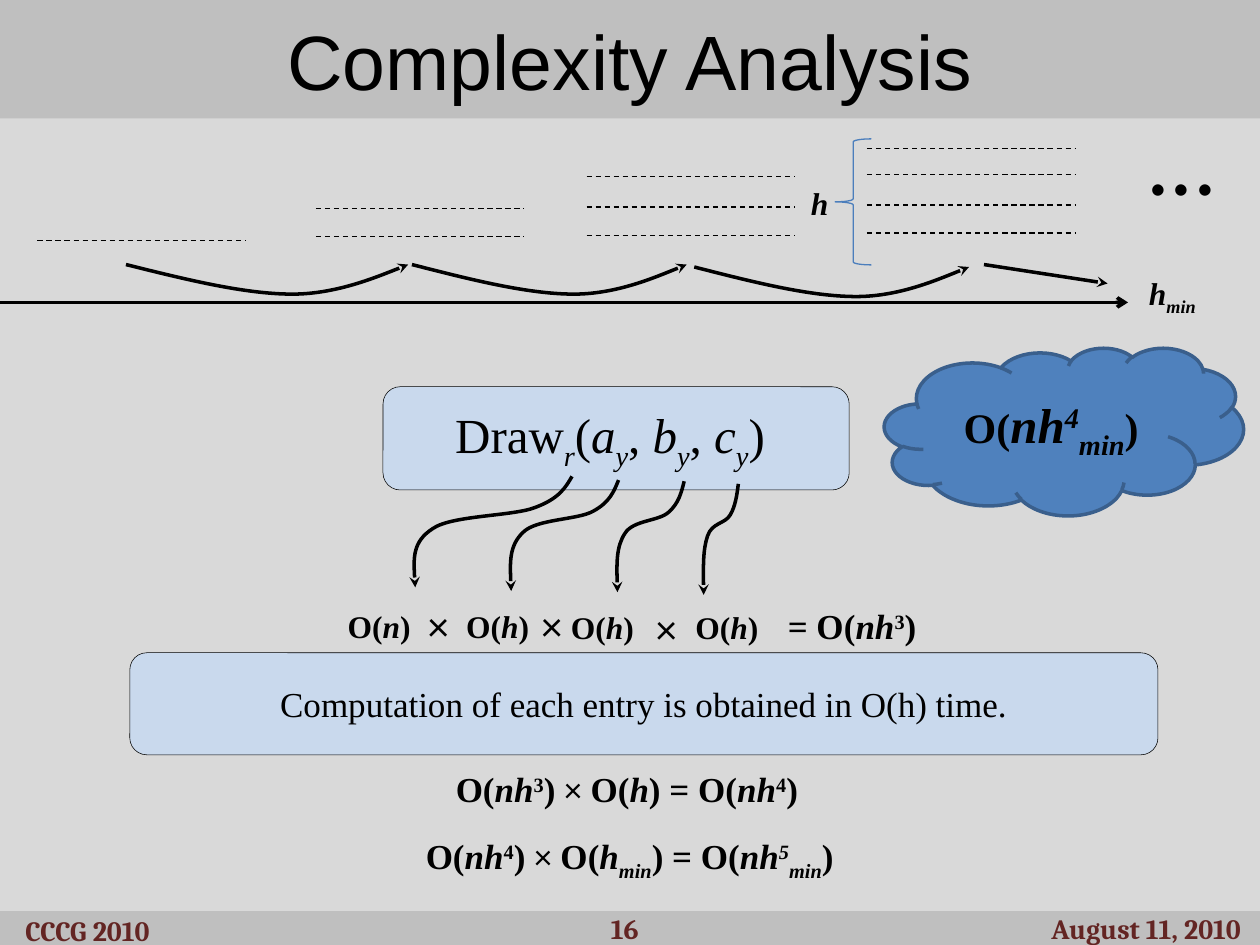
from dataclasses import dataclass

from lxml import etree
from pptx import Presentation
from pptx.dml.color import RGBColor
from pptx.enum.dml import MSO_LINE
from pptx.enum.shapes import MSO_CONNECTOR, MSO_SHAPE
from pptx.enum.text import MSO_ANCHOR, PP_ALIGN
from pptx.oxml.ns import qn
from pptx.util import Pt

ROUND, RECT = MSO_SHAPE.ROUNDED_RECTANGLE, MSO_SHAPE.RECTANGLE
CLOUD, BRACE = MSO_SHAPE.CLOUD, MSO_SHAPE.LEFT_BRACE
STRAIGHT, DASH = MSO_CONNECTOR.STRAIGHT, MSO_LINE.DASH
MIDDLE, CENTER, LEFT = MSO_ANCHOR.MIDDLE, PP_ALIGN.CENTER, PP_ALIGN.LEFT


@dataclass(frozen=True)
class Theme:
    back: str = "D9D9D9"
    band: str = "BFBFBF"
    ink: str = "000000"
    panel: str = "C6D9F1"
    cloud: str = "4F81BD"
    rim: str = "3A5F8C"
    brace: str = "4B7EBC"
    foot: str = "632523"
    head: str = "Arial"
    serif: str = "Times New Roman"
    sans: str = "Calibri"
    slab: str = "Cambria"
    title: int = 44
    dots: int = 54
    large: int = 28
    times: int = 24
    body: int = 20
    small: int = 18
    note: int = 16


THEME = Theme()


@dataclass(frozen=True)
class Run:
    text: str
    tilt: bool = False
    base: int = 0
    face: str = THEME.serif
    size: int = 0  # 0 takes the size of the label
    bold: bool = True


@dataclass(frozen=True)
class Label:
    box: tuple[float, float, float, float]
    runs: list[Run]
    size: int = THEME.small
    color: str = THEME.ink
    bold: bool = True
    align: PP_ALIGN = CENTER
    left: float = 0
    right: float = 0


@dataclass(frozen=True)
class Stack:
    x: float
    rows: list[float]


def hue(code: str) -> RGBColor:
    return RGBColor.from_string(code)


def var(text: str, base: int = 0, size: int = 0) -> Run:
    return Run(text, True, base, size=size)


def power(text: str) -> Run:
    return Run(text, base=30)


def order(name: str) -> list[Run]:
    return [Run("O("), var(name), Run(")")]


def write(shape, label: Label) -> None:
    frame = shape.text_frame
    frame.word_wrap = True
    frame.vertical_anchor = MIDDLE
    frame.margin_top = frame.margin_bottom = 0
    frame.margin_left, frame.margin_right = Pt(label.left), Pt(label.right)
    para = frame.paragraphs[0]
    para.alignment = label.align
    for part in label.runs:
        run = para.add_run()
        run.text = part.text
        font = run.font
        font.name, font.size = part.face, Pt(part.size or label.size)
        font.bold, font.italic = label.bold and part.bold, part.tilt
        font.color.rgb = hue(label.color)
        if part.base:
            run._r.get_or_add_rPr().set("baseline", str(part.base * 1000))


def text(slide, label: Label) -> None:
    write(slide.shapes.add_textbox(*map(Pt, label.box)), label)


def block(slide, kind, box, fill="", line="", width=0.0, alpha=100):
    shape = slide.shapes.add_shape(kind, *map(Pt, box))
    shape.shadow.inherit = False
    if fill:
        shape.fill.solid()
        shape.fill.fore_color.rgb = hue(fill)
        if alpha < 100:
            tint = shape._element.spPr.find(".//" + qn("a:srgbClr"))
            etree.SubElement(tint, qn("a:alpha")).set("val", str(alpha * 1000))
    else:
        shape.fill.background()
    if line:
        shape.line.color.rgb = hue(line)
        shape.line.width = Pt(width)
    else:
        shape.line.fill.background()
    return shape


def panel(slide, label: Label, kind=ROUND, fill=THEME.panel, line=THEME.ink, width=0.3, alpha=84) -> None:
    write(block(slide, kind, label.box, fill, line, width, alpha), label)


def stroke(shape, width: float, tip: str = "", dash: bool = False) -> None:
    shape.line.color.rgb = hue(THEME.ink)
    shape.line.width = Pt(width)
    if dash:
        shape.line.dash_style = DASH
    if tip:
        etree.SubElement(shape.line._get_or_add_ln(), qn("a:tailEnd")).set("type", tip)


def rule(slide, start, end, width: float, tip: str = "", dash: bool = False) -> None:
    line = slide.shapes.add_connector(STRAIGHT, *map(Pt, (*start, *end)))
    stroke(line, width, tip, dash)
    etree.SubElement(line._element.spPr, qn("a:effectLst"))


# Bezier points as shares of a curve's width and height
ARC = [(0.21, 0.5), (0.42, 1), (0.59, 1), (0.75, 1), (1, 0), (1, 0)]
HOOK = [(0.04, 0.1), (0.08, 0.2), (0.23, 0.28), (0.37, 0.36), (0.75, 0.35),
        (0.87, 0.47), (1, 0.59), (0.99, 0.8), (0.98, 1)]


def curve(slide, x: float, y: float, wide: float, high: float, form) -> None:
    pen = slide.shapes.build_freeform(Pt(x), Pt(y))
    pen.add_line_segments([(Pt(x + a * wide), Pt(y + b * high)) for a, b in form], close=False)
    shape = pen.convert_to_shape()
    shape.shadow.inherit = False
    shape.fill.background()
    track = next(shape._element.iter(qn("a:path")))
    legs = track.findall(qn("a:lnTo"))
    for i in range(0, len(legs), 3):  # three line points become one cubic
        bend = etree.Element(qn("a:cubicBezTo"))
        legs[i].addprevious(bend)
        for leg in legs[i:i + 3]:
            bend.append(leg[0])
            track.remove(leg)
    stroke(shape, 2, "stealth")


def main() -> None:
    deck = Presentation()
    deck.slide_width, deck.slide_height = Pt(720), Pt(540)
    slide = deck.slides.add_slide(deck.slide_layouts[5])
    slide.background.fill.solid()
    slide.background.fill.fore_color.rgb = hue(THEME.back)

    # Title and footer bands
    head = slide.shapes.title
    head.left, head.top, head.width, head.height = map(Pt, (0, 0, 720, 67.7))
    head.fill.solid()
    head.fill.fore_color.rgb = hue(THEME.band)
    write(head, Label((), [Run("Complexity Analysis", face=THEME.head)], THEME.title, bold=False))
    block(slide, RECT, (0, 520.6, 720, 19.4), THEME.band)
    for words, x, y, wide in [("CCCG 2010", 0, 522.5, 100), ("16", 294, 521, 126),
                              ("August 11, 2010", 590, 521, 130)]:
        text(slide, Label((x, y, wide, 18.5), [Run(words, face=THEME.slab)], THEME.note, THEME.foot))

    # Growing stacks of dashed levels
    for stack in [Stack(21.4, [137.4]), Stack(180.5, [119.2, 135.2]),
                  Stack(335.2, [101, 118.3, 134.5]), Stack(495.4, [84.8, 99.9, 117.2, 133.2])]:
        for y in stack.rows:
            rule(slide, (stack.x, y), (stack.x + 119.2, y), 0.75, dash=True)
    block(slide, BRACE, (477.2, 79.4, 20.7, 72), line=THEME.brace, width=0.75)
    text(slide, Label((456.5, 102.2, 23.8, 28), [var("h")]))
    text(slide, Label((643, 68.4, 64.8, 43.2), [Run("...", face=THEME.sans)], THEME.dots, bold=False))

    # Axis and steps between stacks
    rule(slide, (0, 172.8), (644.6, 172.8), 2, "arrow")
    text(slide, Label((648, 154.8, 44, 28), [var("h"), var("min", -25)]))
    for x, y, wide in [(72, 151.2, 161.3), (235.4, 151.2, 157), (396.7, 152.6, 157)]:
        curve(slide, x, y, wide, 16.9, ARC)
    rule(slide, (562.3, 151.2), (632.9, 162), 2, "stealth")

    # Draw call, its result and the closing cloud
    call = [Run("Draw"), var("r", -25), Run("(")]
    for name, mark in [("a", ", "), ("b", ", "), ("c", ")")]:
        call += [var(name), var("y", -25), Run(mark)]
    panel(slide, Label((218.9, 221, 266.4, 59), call, THEME.large, bold=False, right=7))
    entry = [Run("Computation of each entry is obtained in O(h) time.")]
    panel(slide, Label((74.2, 373, 587.5, 58.3), entry, THEME.body, bold=False))
    big = THEME.large
    total = [Run("O("), var("nh", size=big), var("4", 30, big), var("min", -25, big), Run(")")]
    panel(slide, Label((505.4, 198.7, 205.2, 95.8), total, THEME.times),
          CLOUD, THEME.cloud, THEME.rim, 2, 100)

    # Hooks from each argument to its cost
    for x, y, wide in [(326.9, 272.2, 91.4), (353.5, 274.3, 38.9),
                       (391, 275, 38.9), (421.9, 276.5, 20.2)]:
        if x != 353.5 or wide != 38.9:
            curve(slide, x, y, -wide, 63.4, HOOK)
        else:
            curve(slide, x, y, -62.6, 63.4, HOOK)
    for x, y, name in [(180.7, 337.7, "n"), (248.4, 337.7, "h"),
                       (308.2, 338.4, "h"), (379.4, 338.4, "h")]:
        text(slide, Label((x, y, 72, 39.6), order(name)))
    for x, y in [(238.3, 347), (303.1, 347), (368.6, 348.5)]:
        text(slide, Label((x, y, 24.5, 20.2), [Run("×", face=THEME.sans)], THEME.times, bold=False))

    # Sums
    cube = [Run("= O("), var("nh"), power("3"), Run(")")]
    text(slide, Label((439.2, 346.3, 109.4, 22.3), cube, THEME.body, right=14))
    cross = Run("×", face=THEME.sans, bold=False)
    quad = [Run("O("), var("nh"), power("3"), Run(") "), cross, Run(" O("), var("h"),
            Run(") = O("), var("nh"), power("4"), Run(")")]
    quint = [Run("O("), var("nh"), power("4"), Run(") "), cross, Run(" O("), var("h"), var("min", -25),
             Run(") = O("), var("nh"), var("5", 30), var("min", -25), Run(")")]
    for box, runs in [((253.4, 438.5, 223.2, 24.5), quad), ((236.2, 477.4, 361.4, 26.6), quint)]:
        text(slide, Label(box, runs, THEME.body, align=LEFT, left=7.2))

    deck.save("out.pptx")


if __name__ == "__main__":
    main()
